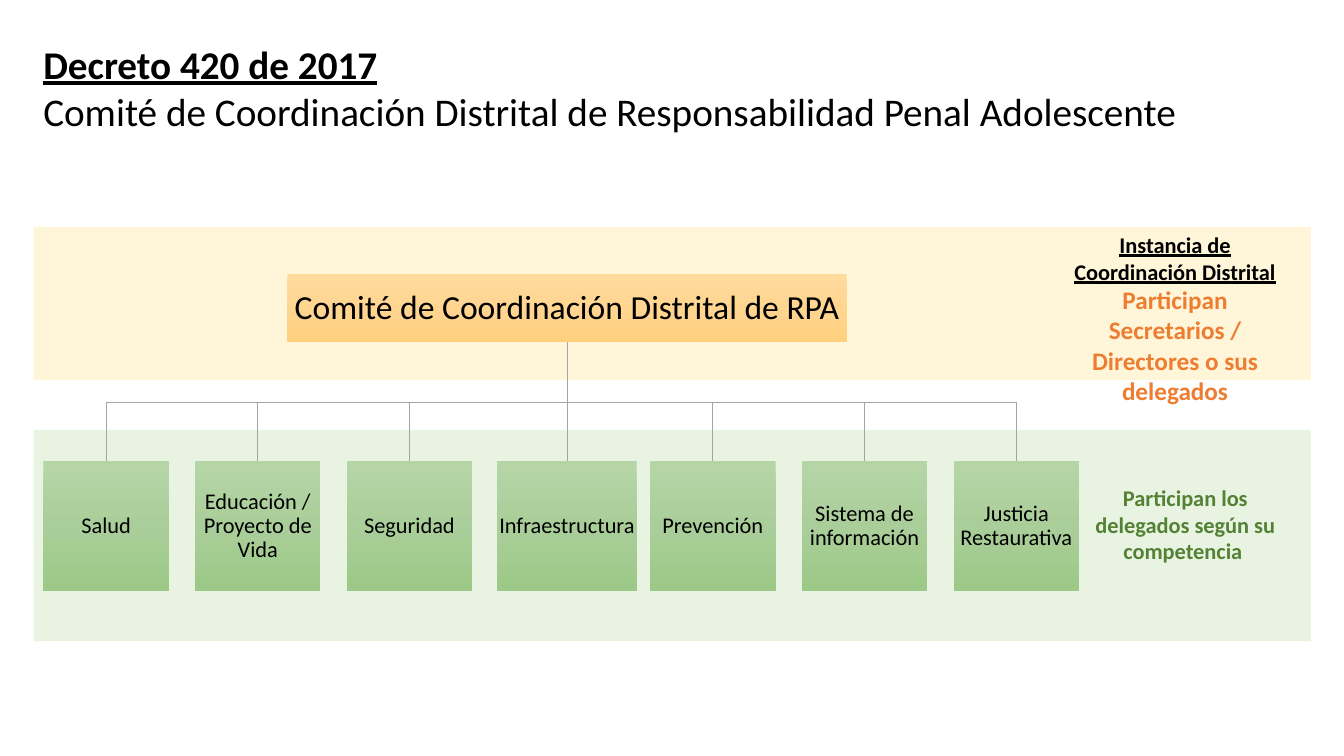
import copy

import pptx
import pptx.dml.color
import pptx.enum.shapes
import pptx.enum.text
import pptx.oxml.ns
import pptx.oxml.xmlchemy
import pptx.util

Pt = pptx.util.Pt
qn = pptx.oxml.ns.qn
OxmlElement = pptx.oxml.xmlchemy.OxmlElement
CENTER = pptx.enum.text.PP_ALIGN.CENTER
LEFT = pptx.enum.text.PP_ALIGN.LEFT
MIDDLE = pptx.enum.text.MSO_ANCHOR.MIDDLE

ORANGE_GRADIENT = ("FFDB9E", "FFD590", "FFD07C")
GREEN_GRADIENT = ("B5D5A7", "AACE9A", "9CC987")
COMMITTEE = (205.2, 196, 399.6, 48.6)
COMMITTEE_CENTER = 405
COMMITTEE_BOTTOM = 244.6
TABLES_TOP = 329.6
TABLES_HEIGHT = 92.3
FIRST_LEFT = 31
PITCH = 108.35
TABLE_WIDTH = 89.6
WIDE_TABLE = "Infraestructura"
WIDE_WIDTH = 99.6
TABLES = (
    "Salud",
    "Educación / Proyecto de Vida",
    "Seguridad",
    WIDE_TABLE,
    "Prevención",
    "Sistema de información",
    "Justicia Restaurativa",
)


def color(code):
    return pptx.dml.color.RGBColor.from_string(code)


def apply_formats(target, formats):
    for name, value in formats.items():
        setattr(target, name, value)


def write_span(para, text, size, code="000000", **formats):
    span = para.add_run()
    span.text = text
    apply_formats(span.font, {"name": "Calibri", "size": Pt(size), **formats})
    span.font.color.rgb = color(code)


def add_rectangle(page, bounds):
    shape = page.shapes.add_shape(
        pptx.enum.shapes.MSO_SHAPE.RECTANGLE, *map(Pt, bounds)
    )
    shape.shadow.inherit = False
    shape.line.fill.background()
    return shape


def add_band(page, bounds, code):
    band = add_rectangle(page, bounds)
    band.fill.solid()
    band.fill.fore_color.rgb = color(code)
    tint = band._element.spPr.find(".//" + qn("a:srgbClr"))
    alpha = OxmlElement("a:alpha")
    alpha.set("val", "25000")
    tint.append(alpha)


def add_node(page, bounds, text, size, gradient):
    node = add_rectangle(page, bounds)
    node.fill.gradient()
    node.fill.gradient_angle = 270
    stops = node._element.spPr.find(".//" + qn("a:gsLst"))
    stops.insert(1, copy.deepcopy(stops[0]))
    for stop, code, position in zip(node.fill.gradient_stops, gradient, (0, 0.5, 1)):
        stop.color.rgb = color(code)
        stop.position = position
    frame = node.text_frame
    margins = ("margin_left", "margin_top", "margin_right", "margin_bottom")
    apply_formats(frame, dict.fromkeys(margins, Pt(0.8)))
    apply_formats(frame, {"word_wrap": True, "vertical_anchor": MIDDLE})
    para = frame.paragraphs[0]
    apply_formats(para, {"alignment": CENTER, "line_spacing": 0.9})
    write_span(para, text, size)


def add_branch(page, center):
    length = TABLES_TOP - COMMITTEE_BOTTOM
    spread = abs(COMMITTEE_CENTER - center)
    left = (COMMITTEE_CENTER + center - length) / 2
    top = (COMMITTEE_BOTTOM + TABLES_TOP - spread) / 2
    start, end, turn = left + length, left, 90
    if center > COMMITTEE_CENTER:
        start, end, turn = left, left + length, 270
    branch = page.shapes.add_connector(
        pptx.enum.shapes.MSO_CONNECTOR.ELBOW,
        Pt(start), Pt(top + spread), Pt(end), Pt(top),
    )
    properties = branch._element.spPr
    properties.find(qn("a:xfrm")).set("rot", str(turn * 60000))
    branch.line.color.rgb = color("A5A5A5")
    branch.line.width = Pt(0.5)
    properties.append(OxmlElement("a:effectLst"))


def add_text(page, bounds, paragraphs, alignment):
    box = page.shapes.add_textbox(*map(Pt, bounds))
    frame = box.text_frame
    frame.word_wrap = True
    for index, spans in enumerate(paragraphs):
        para = frame.add_paragraph() if index else frame.paragraphs[0]
        para.alignment = alignment
        for text, size, formats in spans:
            write_span(para, text, size, **formats)


def main():
    deck = pptx.Presentation()
    apply_formats(deck, {"slide_width": Pt(960), "slide_height": Pt(540)})
    page = deck.slides.add_slide(deck.slide_layouts[6])

    add_band(page, (24, 307, 912.4, 151), "A9D18E")
    add_band(page, (24, 162, 912.4, 109.6), "FFD966")
    add_node(page, COMMITTEE, "Comité de Coordinación Distrital de RPA", 24,
             ORANGE_GRADIENT)

    for index, name in enumerate(TABLES):
        left, width = FIRST_LEFT + index * PITCH, TABLE_WIDTH
        if name == WIDE_TABLE:
            left, width = COMMITTEE_CENTER - WIDE_WIDTH / 2, WIDE_WIDTH
        add_node(page, (left, TABLES_TOP, width, TABLES_HEIGHT), name, 16,
                 GREEN_GRADIENT)
        add_branch(page, left + width / 2)

    heading = {"bold": True, "underline": True}
    add_text(page, (749, 161.3, 180.7, 113.8), [[
        ("Instancia de Coordinación Distrital ", 16, heading),
        ("Participan Secretarios / Directores o sus delegados", 18,
         {"code": "ED7D31", "bold": True}),
    ]], CENTER)
    add_text(page, (773.3, 342, 146.9, 65.5), [[
        ("Participan los delegados según su competencia ", 16,
         {"code": "548235", "bold": True}),
    ]], CENTER)
    add_text(page, (23.8, 25.2, 843.8, 74.9), [
        [("Decreto 420 de 2017", 28, heading)],
        [("Comité de Coordinación Distrital de Responsabilidad Penal Adolescente",
          28, {})],
    ], LEFT)

    deck.save("out.pptx")


if __name__ == "__main__":
    main()
